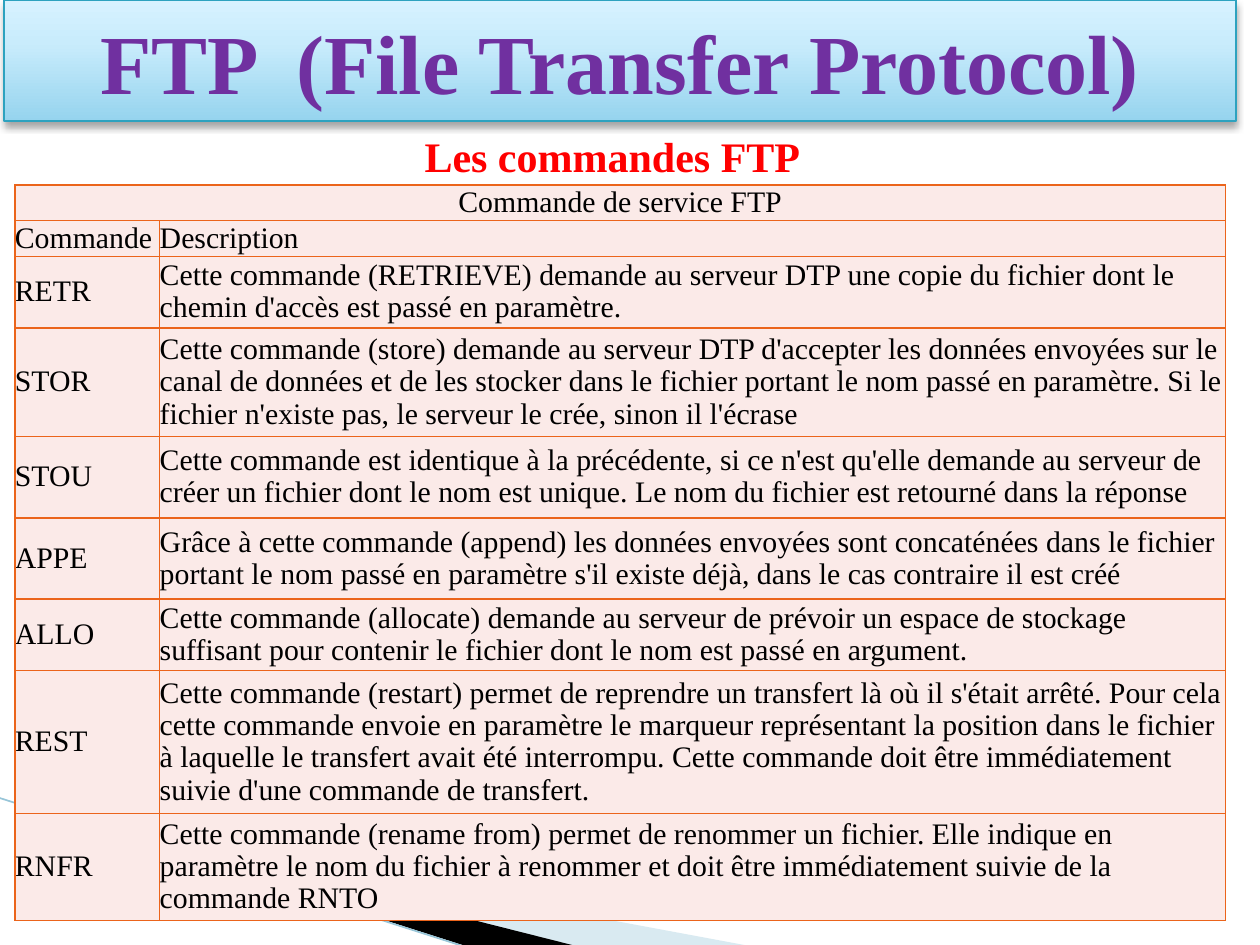
from copy import deepcopy

from lxml.etree import SubElement
from pptx import Presentation
from pptx.dml.color import RGBColor
from pptx.enum.shapes import MSO_CONNECTOR as Connector, MSO_SHAPE as Shape
from pptx.enum.text import MSO_ANCHOR as Anchor, PP_ALIGN as Align
from pptx.oxml.ns import qn
from pptx.util import Cm, Pt

FONT = "Times New Roman"
COLORS = {
    "title": "7030A0", "heading": "FF0000", "text": "000000",
    "banner_line": "2DA2BF", "shadow": "000000",
    "cell": "FBEAE8", "border": "EB641B",
    "pale_wave": "A0CBDC", "dark_wave": "000000", "wave_line": "97C5D8",
}
BANNER_STOPS = [(0, "96D4EE"), (0.65, "C9ECFC"), (1, "D7F2FF")]

TABLE_TITLE = "Commande de service FTP"
COLUMN_WIDTHS = [2.92, 21.49]
TITLE_ROW_HEIGHT = 0.72
# Command, description, row height in cm
COMMANDS = [
    ("Commande", "Description", 0.72),
    ("RETR", "Cette commande (RETRIEVE) demande au serveur DTP une copie du fichier "
     "dont le chemin d'accès est passé en paramètre.", 1.44),
    ("STOR", "Cette commande (store) demande au serveur DTP d'accepter les données "
     "envoyées sur le canal de données et de les stocker dans le fichier portant le nom "
     "passé en paramètre. Si le fichier n'existe pas, le serveur le crée, sinon il "
     "l'écrase", 2.19),
    ("STOU", "Cette commande est identique à la précédente, si ce n'est qu'elle demande "
     "au serveur de créer un fichier dont le nom est unique. Le nom du fichier est "
     "retourné dans la réponse", 1.64),
    ("APPE", "Grâce à cette commande (append) les données envoyées sont concaténées dans "
     "le fichier portant le nom passé en paramètre s'il existe déjà, dans le cas "
     "contraire il est créé", 1.64),
    ("ALLO", "Cette commande (allocate) demande au serveur de prévoir un espace de "
     "stockage suffisant pour contenir le fichier dont le nom est passé en argument.",
     1.44),
    ("REST", "Cette commande (restart) permet de reprendre un transfert là où il s'était "
     "arrêté. Pour cela cette commande envoie en paramètre le marqueur représentant la "
     "position dans le fichier à laquelle le transfert avait été interrompu. Cette "
     "commande doit être immédiatement suivie d'une commande de transfert.", 2.88),
    ("RNFR", "Cette commande (rename from) permet de renommer un fichier. Elle indique "
     "en paramètre le nom du fichier à renommer et doit être immédiatement suivie de la "
     "commande RNTO", 2.16),
]


def rgb(name):
    return RGBColor.from_string(COLORS[name])


def write(frame, text, size, color, bold=False, align=Align.LEFT):
    paragraph = frame.paragraphs[0]
    paragraph.text = text
    paragraph.alignment = align
    font = paragraph.runs[0].font
    font.name, font.size, font.bold = FONT, Pt(size), bold
    font.color.rgb = rgb(color)
    return paragraph


def add_wave(slide, points, color, opacity=None):
    corners = [(Cm(x), Cm(y)) for x, y in points]
    builder = slide.shapes.build_freeform(*corners[0])
    builder.add_line_segments(corners[1:])
    wave = builder.convert_to_shape()
    wave.shadow.inherit = False
    wave.fill.solid()
    wave.fill.fore_color.rgb = rgb(color)
    wave.line.fill.background()
    if opacity:
        fill_color = wave.fill._xPr.find(qn("a:solidFill"))[0]
        SubElement(fill_color, qn("a:alpha"), val=str(opacity * 1000))


def add_wave_line(slide, start, end):
    edge = slide.shapes.add_connector(
        Connector.STRAIGHT, *(Cm(value) for value in start + end))
    edge.line.color.rgb = rgb("wave_line")
    edge.line.width = Pt(0.95)
    SubElement(edge._element.spPr, qn("a:effectLst"))


def add_banner(slide, text):
    banner = slide.shapes.add_shape(Shape.RECTANGLE, Cm(0.08), 0, Cm(24.84), Cm(2.44))
    banner.line.color.rgb = rgb("banner_line")
    banner.line.width = Pt(0.75)

    # Three-stop gradient from bottom to top
    banner.fill.gradient()
    banner.fill.gradient_angle = 90
    stop_list = banner._element.spPr.find(".//" + qn("a:gsLst"))
    stop_list.append(deepcopy(stop_list[0]))
    for stop, (position, color) in zip(banner.fill.gradient_stops, BANNER_STOPS):
        stop.position = position
        stop.color.rgb = RGBColor.from_string(color)

    # Soft shadow below
    banner.shadow.inherit = False
    effects = banner._element.spPr.find(qn("a:effectLst"))
    shadow = SubElement(effects, qn("a:outerShdw"), blurRad=str(Pt(4)),
                        dist=str(Pt(3)), dir="5400000", rotWithShape="0")
    color = SubElement(shadow, qn("a:srgbClr"), val=COLORS["shadow"])
    SubElement(color, qn("a:alpha"), val="35000")

    banner.text_frame.vertical_anchor = Anchor.MIDDLE
    write(banner.text_frame, text, 48, "title", True, Align.CENTER)


def add_heading(slide, text):
    heading = slide.shapes.add_textbox(Cm(8.31), Cm(2.51), Cm(8.15), Cm(1.27))
    heading.text_frame.word_wrap = False
    write(heading.text_frame, text, 24, "heading", True)


def fill_cell(cell, text, align=Align.LEFT):
    cell.margin_left = cell.margin_right = cell.margin_top = cell.margin_bottom = 0
    cell.vertical_anchor = Anchor.MIDDLE
    write(cell.text_frame, text, 17, "text", align=align).line_spacing = 0.97


def style_cell(cell):
    properties = cell._tc.get_or_add_tcPr()
    for side in ("a:lnL", "a:lnR", "a:lnT", "a:lnB"):
        border = SubElement(properties, qn(side), w=str(Pt(1)))
        border_fill = SubElement(border, qn("a:solidFill"))
        SubElement(border_fill, qn("a:srgbClr"), val=COLORS["border"])
    cell.fill.solid()
    cell.fill.fore_color.rgb = rgb("cell")


def add_command_table(slide):
    heights = [TITLE_ROW_HEIGHT] + [height for _, _, height in COMMANDS]
    table = slide.shapes.add_table(
        len(heights), len(COLUMN_WIDTHS), Cm(0.3), Cm(3.73),
        Cm(sum(COLUMN_WIDTHS)), Cm(sum(heights))).table
    table.first_row = table.horz_banding = False
    for column, width in zip(table.columns, COLUMN_WIDTHS):
        column.width = Cm(width)
    for row, height in zip(table.rows, heights):
        row.height = Cm(height)
    for cell in table.iter_cells():
        style_cell(cell)

    table.cell(0, 0).merge(table.cell(0, 1))
    fill_cell(table.cell(0, 0), TABLE_TITLE, Align.CENTER)
    for row, (command, description, _) in enumerate(COMMANDS, start=1):
        fill_cell(table.cell(row, 0), command)
        fill_cell(table.cell(row, 1), description)


def main():
    deck = Presentation()
    deck.slide_width, deck.slide_height = Cm(25.4), Cm(19.05)
    slide = deck.slides.add_slide(deck.slide_layouts[6])

    # Background waves
    add_wave(slide, [(1.4, 16.52), (15.11, 19.07), (11.58, 19.07)], "pale_wave", 40)
    add_wave(slide, [(1.35, 16.48), (11.61, 19.07), (9.45, 19.09), (1.37, 16.51)],
             "dark_wave")
    add_wave_line(slide, (-0.03, 16.08), (9.42, 19.1))

    # Title, heading and commands
    add_banner(slide, "FTP  (File Transfer Protocol)")
    add_heading(slide, "Les commandes FTP")
    add_command_table(slide)

    deck.save("out.pptx")


if __name__ == "__main__":
    main()
